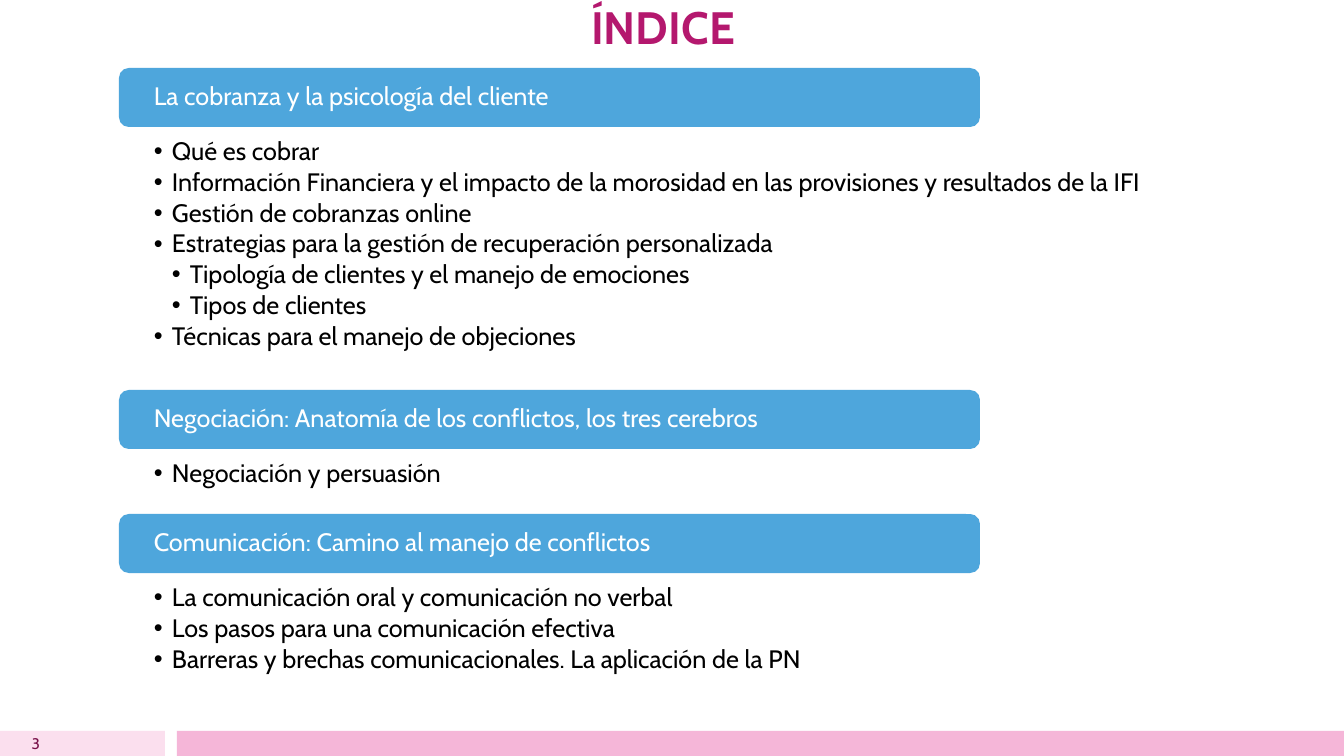
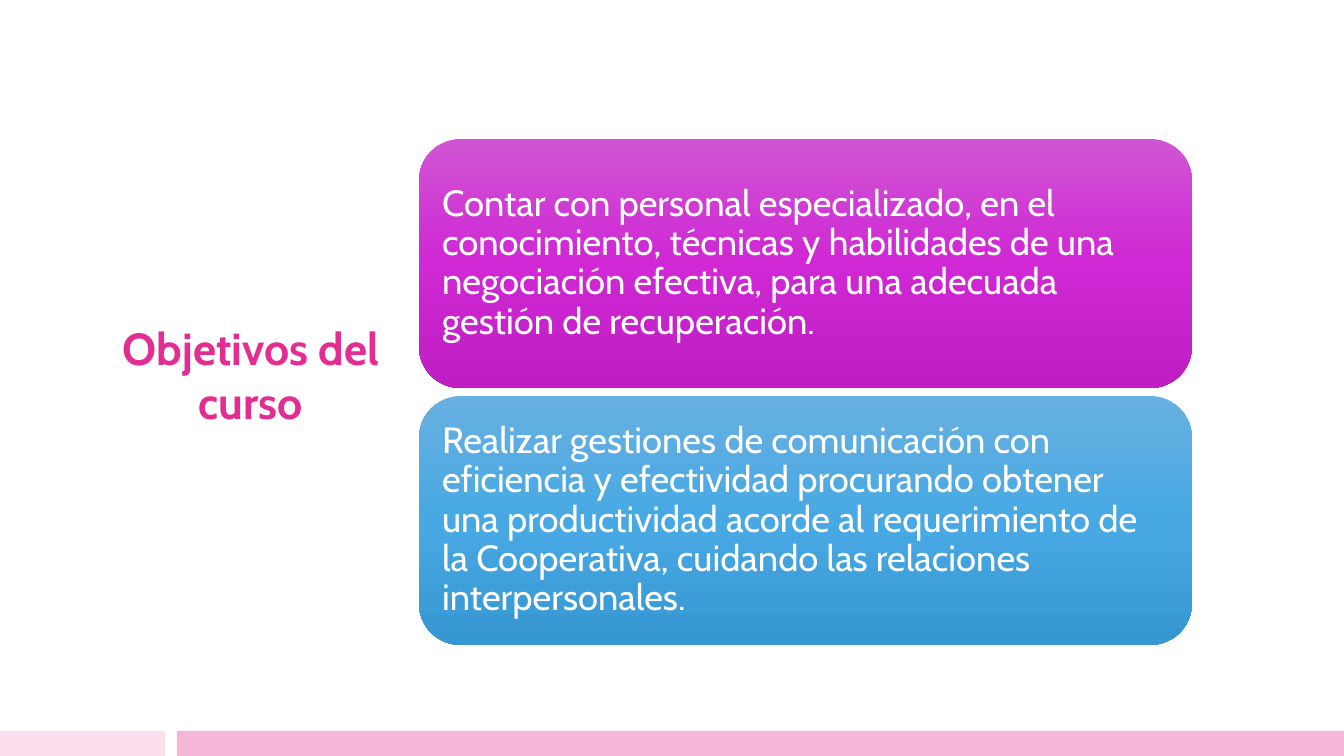
from lxml import etree
from pptx import Presentation
from pptx.dml.color import RGBColor
from pptx.enum.shapes import MSO_SHAPE
from pptx.enum.text import MSO_ANCHOR, PP_ALIGN
from pptx.oxml.ns import qn
from pptx.util import Pt

RECTANGLE, ROUNDED = MSO_SHAPE.RECTANGLE, MSO_SHAPE.ROUNDED_RECTANGLE
TOP, MIDDLE, BOTTOM = MSO_ANCHOR.TOP, MSO_ANCHOR.MIDDLE, MSO_ANCHOR.BOTTOM
LEFT, CENTER, RIGHT = PP_ALIGN.LEFT, PP_ALIGN.CENTER, PP_ALIGN.RIGHT

PAGE_WIDTH, PAGE_HEIGHT = 1344, 756
SCALE = 12192000 / PAGE_WIDTH
FONT = "Cabin"
COLORS = {
    "band_light": "FBDFEE",
    "band": "F5B6D8",
    "title": "B4186E",
    "accent": "E32D91",
    "number": "781049",
    "header": "4EA6DC",
    "text": "000000",
    "white": "FFFFFF",
}
PURPLE = ("D055D4", "CF28D4", "BF1DC3")
BLUE = ("68B0E1", "47A8E3", "3797D2")
BAND_TOP, BAND_HEIGHT = 731, 25

# Each topic: header and its (level, text) bullets
TOPICS = [
    ("La cobranza y la psicología del cliente", [
        (1, "Qué es cobrar"),
        (1, "Información Financiera y el impacto de la morosidad en las "
            "provisiones y resultados de la IFI"),
        (1, "Gestión de cobranzas online"),
        (1, "Estrategias para la gestión de recuperación personalizada"),
        (2, "Tipología de clientes y el manejo de emociones"),
        (2, "Tipos de clientes"),
        (1, "Técnicas para el manejo de objeciones"),
    ]),
    ("Negociación: Anatomía de los conflictos, los tres cerebros", [
        (1, "Negociación y persuasión"),
    ]),
    ("Comunicación: Camino al manejo de conflictos", [
        (1, "La comunicación oral y comunicación no verbal"),
        (1, "Los pasos para una comunicación efectiva"),
        (1, "Barreras y brechas comunicacionales. La aplicación de la PN"),
    ]),
]
GOALS = [
    (PURPLE, "Contar con personal especializado, en el conocimiento, técnicas y "
             "habilidades de una negociación efectiva, para una adecuada gestión "
             "de recuperación."),
    (BLUE, "Realizar gestiones de comunicación con eficiencia y efectividad "
           "procurando obtener una productividad acorde al requerimiento de la "
           "Cooperativa, cuidando las relaciones interpersonales."),
]


def px(length):
    return round(length * SCALE)


def set_all(target, **values):
    for name, value in values.items():
        setattr(target, name, value)


class Deck:
    """Holds the shared style and the page being drawn."""

    def __init__(self):
        self.deck = Presentation()
        set_all(self.deck, slide_width=px(PAGE_WIDTH), slide_height=px(PAGE_HEIGHT))
        self.page = None

    def new_page(self):
        self.page = self.deck.slides.add_slide(self.deck.slide_layouts[6])
        for left, width, color in ((0, 165, "band_light"), (177, 1167, "band")):
            self.shape(RECTANGLE, (left, BAND_TOP, width, BAND_HEIGHT), COLORS[color])

    def shape(self, kind, place, fill):
        """Draw a borderless shape; fill is one colour or a tuple of gradient stops."""
        box = self.page.shapes.add_shape(kind, *map(px, place))
        box.shadow.inherit = False
        box.line.fill.background()
        if isinstance(fill, str):
            box.fill.solid()
            box.fill.fore_color.rgb = RGBColor.from_string(fill)
        else:
            self.gradient(box, fill)
        return box

    def gradient(self, box, colors):
        """Fill from top to bottom with evenly spaced stops."""
        box.fill.gradient()
        box.fill.gradient_angle = 270
        stops = next(box.element.iter(qn("a:gsLst")))
        stops.clear()
        for index, color in enumerate(colors):
            position = 100000 * index // (len(colors) - 1)
            stop = etree.SubElement(stops, qn("a:gs"), pos=str(position))
            etree.SubElement(stop, qn("a:srgbClr"), val=color)

    def put_text(self, box, paragraphs, size, color, align=LEFT, anchor=MIDDLE,
                 margins=(0, 0, 0, 0), bold=False, spacing=1.0, after=0):
        """Fill a box with (level, text) pairs; level 0 has no bullet."""
        frame = box.text_frame
        left, top, right, bottom = map(px, margins)
        set_all(frame, word_wrap=True, vertical_anchor=anchor, margin_left=left,
                margin_top=top, margin_right=right, margin_bottom=bottom)
        for index, (level, text) in enumerate(paragraphs):
            para = frame.paragraphs[0] if index == 0 else frame.add_paragraph()
            set_all(para, alignment=align, line_spacing=spacing, space_after=Pt(after))
            if level:
                self.bullet(para, level)
            span = para.add_run()
            span.text = text
            set_all(span.font, name=FONT, size=Pt(size), bold=bold)
            span.font.color.rgb = RGBColor.from_string(COLORS[color])

    def bullet(self, para, level):
        step = px(18)
        properties = para._p.get_or_add_pPr()
        properties.set("marL", str(step * level))
        properties.set("indent", str(-step))
        etree.SubElement(properties, qn("a:buFont"), typeface="Arial")
        etree.SubElement(properties, qn("a:buChar"), char="•")

    def text(self, place, paragraphs, size, color, **style):
        box = self.page.shapes.add_textbox(*map(px, place))
        self.put_text(box, paragraphs, size, color, **style)

    def title(self, place, text, size, color, **style):
        self.text(place, [(0, text)], size, color, align=CENTER, bold=True, **style)

    def panel(self, place, fill, text, size, margins):
        box = self.shape(ROUNDED, place, fill)
        self.put_text(box, [(0, text)], size, "white", margins=margins, spacing=0.9)


def draw_index(deck):
    deck.new_page()
    deck.title((158, 11, 1010, 46), "ÍNDICE", 32.4, "title",
               anchor=BOTTOM, margins=(10, 5, 10, 3))
    deck.text((0, BAND_TOP, 50, BAND_HEIGHT), [(0, "3")], 11, "number",
              align=RIGHT, margins=(0, 0, 10, 0))
    top, list_offset, line_height, topic_gap = 68, 71, 33, 91
    for header, bullets in TOPICS:
        deck.panel((119, top, 861, 59), COLORS["header"], header, 18, (32, 0, 32, 0))
        list_height = line_height * len(bullets)
        deck.text((154, top + list_offset, 1038, list_height), bullets, 18, "text",
                  anchor=TOP, spacing=0.9, after=2.5)
        top += list_height + topic_gap


def draw_goals(deck):
    deck.new_page()
    deck.title((83, 115, 336, 519), "Objetivos del curso", 32, "accent",
               margins=(10, 5, 10, 5))
    top, height, gap = 139, 249, 8
    for index, (colors, goal) in enumerate(GOALS):
        place = (419, top + index * (height + gap), 773, height)
        deck.panel(place, colors, goal, 26, (11, 11, 11, 11))


def main():
    deck = Deck()
    draw_index(deck)
    draw_goals(deck)
    deck.deck.save("out.pptx")


if __name__ == "__main__":
    main()
